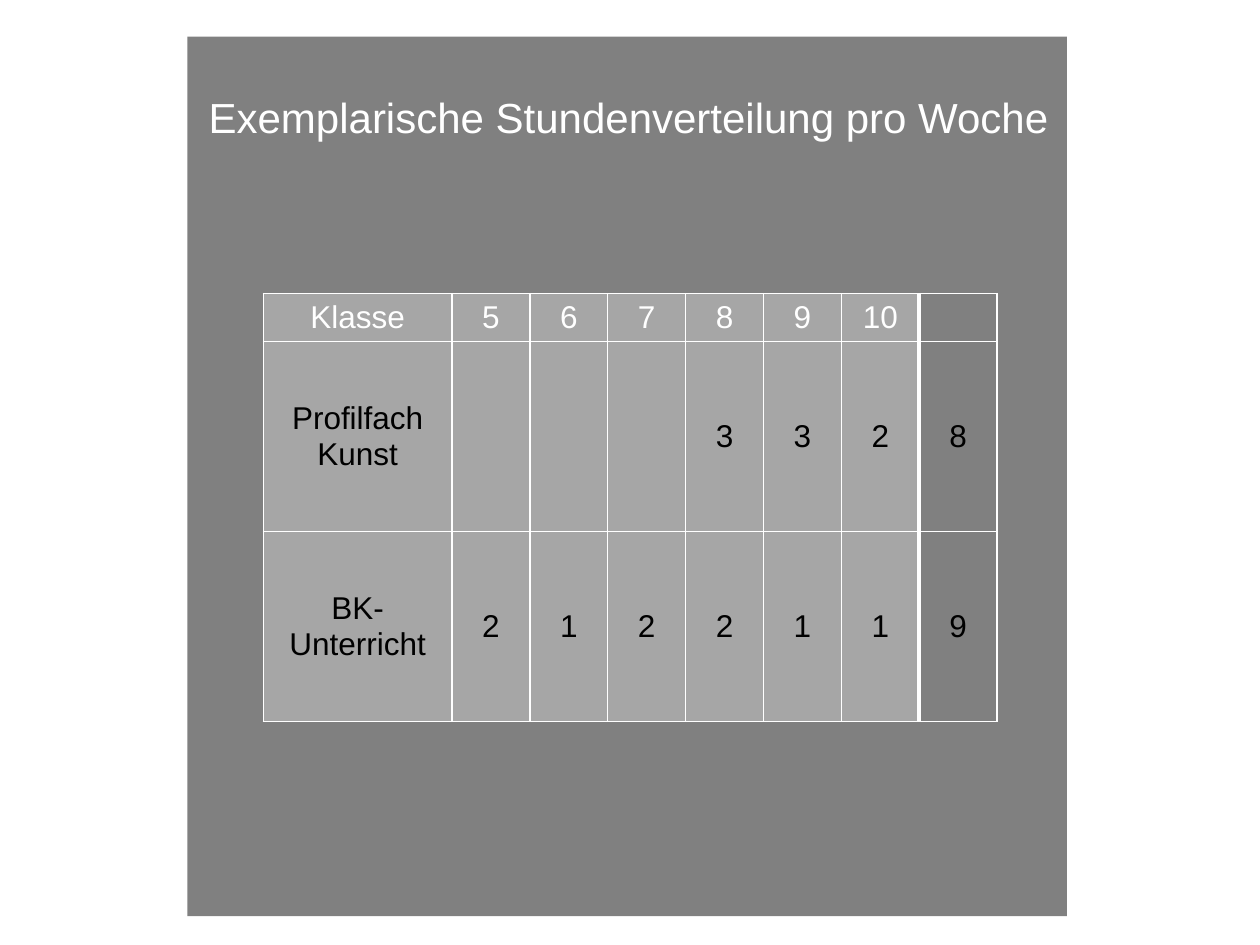
"""Build a slide with the weekly lesson plan for art classes."""
from pptx import Presentation
from pptx import util as u
from pptx.dml import color
from pptx.enum import shapes, text
from pptx.oxml import parse_xml
from pptx.oxml import ns

WHITE, BLACK, GREY, LIGHT = "FFFFFF", "000000", "808080", "A6A6A6"


def rgb(code):
    return color.RGBColor.from_string(code)


class Deck:
    def __init__(self, show, font="Arial"):
        self.font = font
        self.slide = show.slides.add_slide(show.slide_layouts[5])

    def label(self, frame, words, size, tint):
        frame.text = words
        para = frame.paragraphs[0]
        para.alignment = text.PP_ALIGN.CENTER
        style = {"name": self.font, "size": u.Pt(size), "bold": False}
        for key, val in style.items():
            setattr(para.font, key, val)
        para.font.color.rgb = rgb(tint)

    def panel(self, box, fill):
        rect = self.slide.shapes.add_shape(
            shapes.MSO_SHAPE.RECTANGLE, *map(u.Cm, box))
        rect.shadow.inherit = False
        rect.fill.solid()
        rect.fill.fore_color.rgb = rgb(fill)
        rect.line.fill.background()
        self.slide.shapes.title.element.addprevious(rect.element)

    def title(self, box, words, size, tint):
        head = self.slide.shapes.title
        for key, val in zip(("left", "top", "width", "height"), box):
            setattr(head, key, u.Cm(val))
        frame = head.text_frame
        style = {"word_wrap": True, "auto_size": text.MSO_AUTO_SIZE.NONE,
                 "vertical_anchor": text.MSO_ANCHOR.MIDDLE}
        for key, val in style.items():
            setattr(frame, key, val)
        self.label(frame, words, size, tint)

    def edge(self, cell, side, width):
        cell._tc.get_or_add_tcPr().append(parse_xml(
            f'<a:ln{side} {ns.nsdecls("a")} w="{u.Pt(width)}"><a:solidFill>'
            f'<a:srgbClr val="{WHITE}"/></a:solidFill></a:ln{side}>'))

    def table(self, spot, cols, rows, data, size):
        area = [*spot, sum(cols), sum(rows)]
        grid = self.slide.shapes.add_table(
            len(rows), len(cols), *map(u.Cm, area)).table
        for col, width in zip(grid.columns, cols):
            col.width = u.Cm(width)
        last = len(cols) - 1
        bold = {"L": last, "R": last - 1}
        for y, (row, high) in enumerate(zip(data, rows)):
            grid.rows[y].height = u.Cm(high)
            for x, words in enumerate(row):
                cell = grid.cell(y, x)
                cell.vertical_anchor = text.MSO_ANCHOR.MIDDLE
                self.label(cell.text_frame, words, size, BLACK if y else WHITE)
                for side in "LRTB":
                    self.edge(cell, side, 2.25 if bold.get(side) == x else 1)
                cell.fill.solid()
                cell.fill.fore_color.rgb = rgb(GREY if x == last else LIGHT)


def main():
    show = Presentation()
    show.slide_width, show.slide_height = u.Cm(25.4), u.Cm(19.05)
    deck = Deck(show)
    deck.panel((3.78, 0.74, 17.73, 17.73), GREY)
    deck.title((1.24, 0.76, 22.86, 3.18),
               "Exemplarische Stundenverteilung pro Woche", 24, WHITE)
    data = [
        ["Klasse", "5", "6", "7", "8", "9", "10", ""],
        ["Profilfach Kunst", "", "", "", "3", "3", "2", "8"],
        ["BK-Unterricht", "2", "1", "2", "2", "1", "1", "9"],
    ]
    deck.table((5.31, 5.92), [3.8] + [1.57] * 7, [0.86, 3.83, 3.83], data, 18)
    show.save("out.pptx")


if __name__ == "__main__":
    main()
